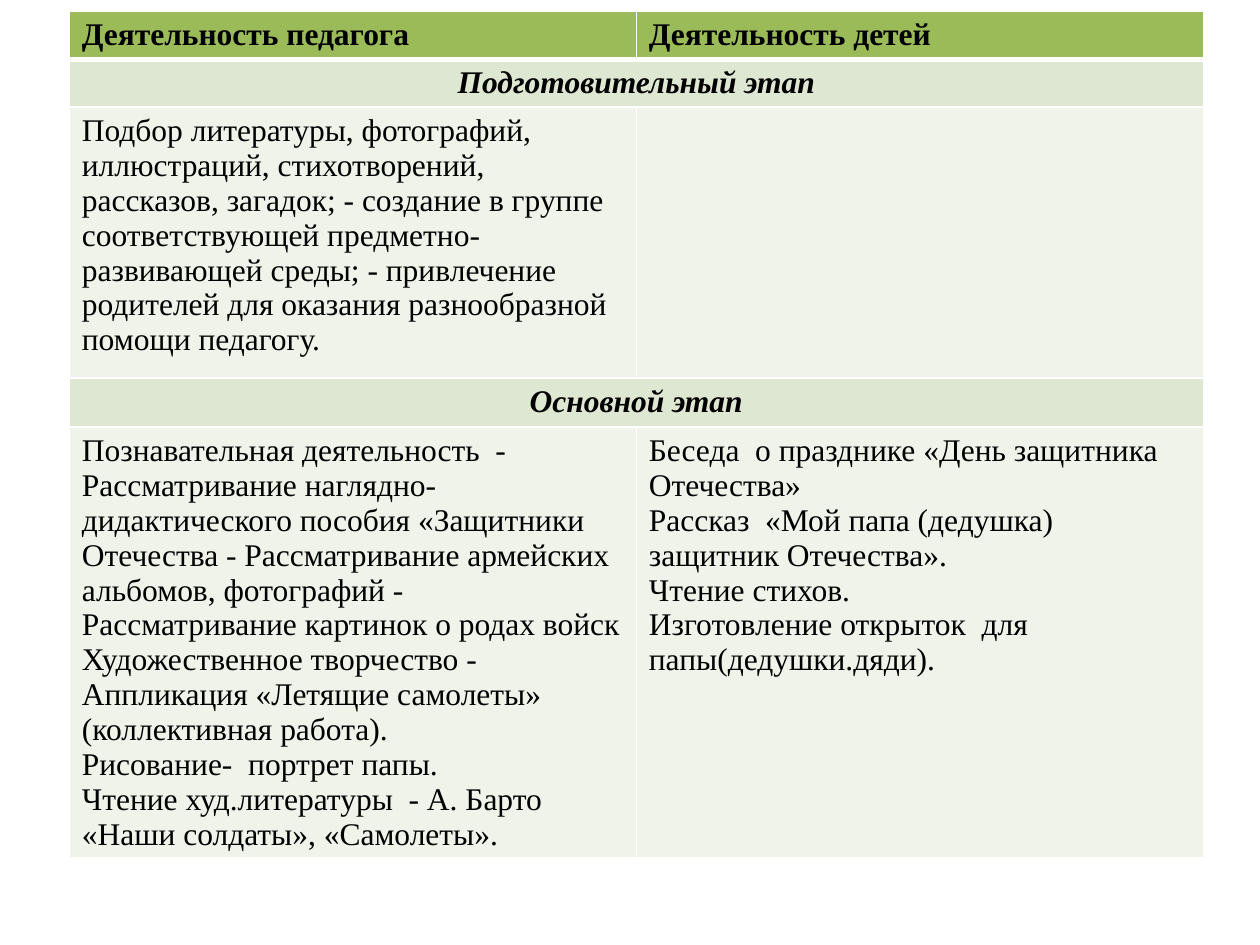
import pptx
import pptx.util
import pptx.dml.color
import pptx.enum.text
import lxml.etree
from dataclasses import dataclass

Pt = pptx.util.Pt
RGB = pptx.dml.color.RGBColor.from_string
ALIGN = pptx.enum.text.PP_ALIGN
NS = "http://schemas.openxmlformats.org/drawingml/2006/main"


@dataclass(frozen=True)
class Theme:
    font: str = "Times New Roman"
    size: int = 18
    text: str = "000000"
    header: str = "9BBB59"
    stage: str = "DEE7D1"
    body: str = "EFF3EA"
    border: str = "FFFFFF"
    thin: int = 1
    thick: int = 3


THEME = Theme()
SLIDE = (720, 540)
LEFT, TOP, COL_W = 39.6, 6.5, 324

ROWS = [
    ("header", 27.36, [["Деятельность педагога"], ["Деятельность детей"]]),
    ("stage", 27.36, [["Подготовительный этап"]]),
    ("body", 154.8, [
        ["Подбор литературы, фотографий, иллюстраций, стихотворений, рассказов, "
         "загадок; - создание в группе соответствующей предметно- развивающей среды; "
         "- привлечение родителей для оказания разнообразной помощи педагогу."],
        [],
    ]),
    ("stage", 28.08, [["Основной этап"]]),
    ("body", 246.24, [
        ["Познавательная деятельность  - Рассматривание наглядно-дидактического "
         "пособия «Защитники Отечества - Рассматривание армейских альбомов, "
         "фотографий - Рассматривание картинок о родах войск",
         "Художественное творчество - Аппликация «Летящие самолеты» "
         "(коллективная работа).",
         "Рисование-  портрет папы.",
         "Чтение худ.литературы  - А. Барто «Наши солдаты», «Самолеты»."],
        ["Беседа  о празднике «День защитника Отечества»",
         "Рассказ  «Мой папа (дедушка) защитник Отечества».",
         "Чтение стихов.",
         "Изготовление открыток  для папы(дедушки.дяди)."],
    ]),
]


def set_borders(cell, top, bottom):
    tcPr = cell._tc.get_or_add_tcPr()
    widths = {"lnL": THEME.thin, "lnR": THEME.thin, "lnT": top, "lnB": bottom}
    for tag, width in widths.items():
        ln = lxml.etree.SubElement(tcPr, f"{{{NS}}}{tag}", w=str(Pt(width)))
        fill = lxml.etree.SubElement(ln, f"{{{NS}}}solidFill")
        lxml.etree.SubElement(fill, f"{{{NS}}}srgbClr", val=THEME.border)


def write(cell, paragraphs, kind):
    tf = cell.text_frame
    for i, text in enumerate(paragraphs):
        p = tf.add_paragraph() if i else tf.paragraphs[0]
        p.alignment = ALIGN.CENTER if kind == "stage" else ALIGN.LEFT
        r = p.add_run()
        r.text = text
        r.font.name = THEME.font
        r.font.size = Pt(THEME.size)
        r.font.bold = kind != "body"
        r.font.italic = kind == "stage"
        r.font.color.rgb = RGB(THEME.text)


def main():
    prs = pptx.Presentation()
    prs.slide_width, prs.slide_height = map(Pt, SLIDE)
    s = prs.slides.add_slide(prs.slide_layouts[6])
    height = sum(h for _, h, _ in ROWS)
    table = s.shapes.add_table(
        len(ROWS), 2, Pt(LEFT), Pt(TOP), Pt(2 * COL_W), Pt(height)).table
    for col in table.columns:
        col.width = Pt(COL_W)

    for n, (kind, row_h, texts) in enumerate(ROWS):
        table.rows[n].height = Pt(row_h)
        cells = [table.cell(n, c) for c in range(2)]
        if kind == "stage":
            cells[0].merge(cells[1])
        for cell in cells:
            set_borders(cell,
                        THEME.thick if n == 1 else THEME.thin,
                        THEME.thick if n == 0 else THEME.thin)
            cell.fill.solid()
            cell.fill.fore_color.rgb = RGB(getattr(THEME, kind))
        for cell, paragraphs in zip(cells, texts):
            write(cell, paragraphs, kind)

    prs.save("out.pptx")


if __name__ == "__main__":
    main()
